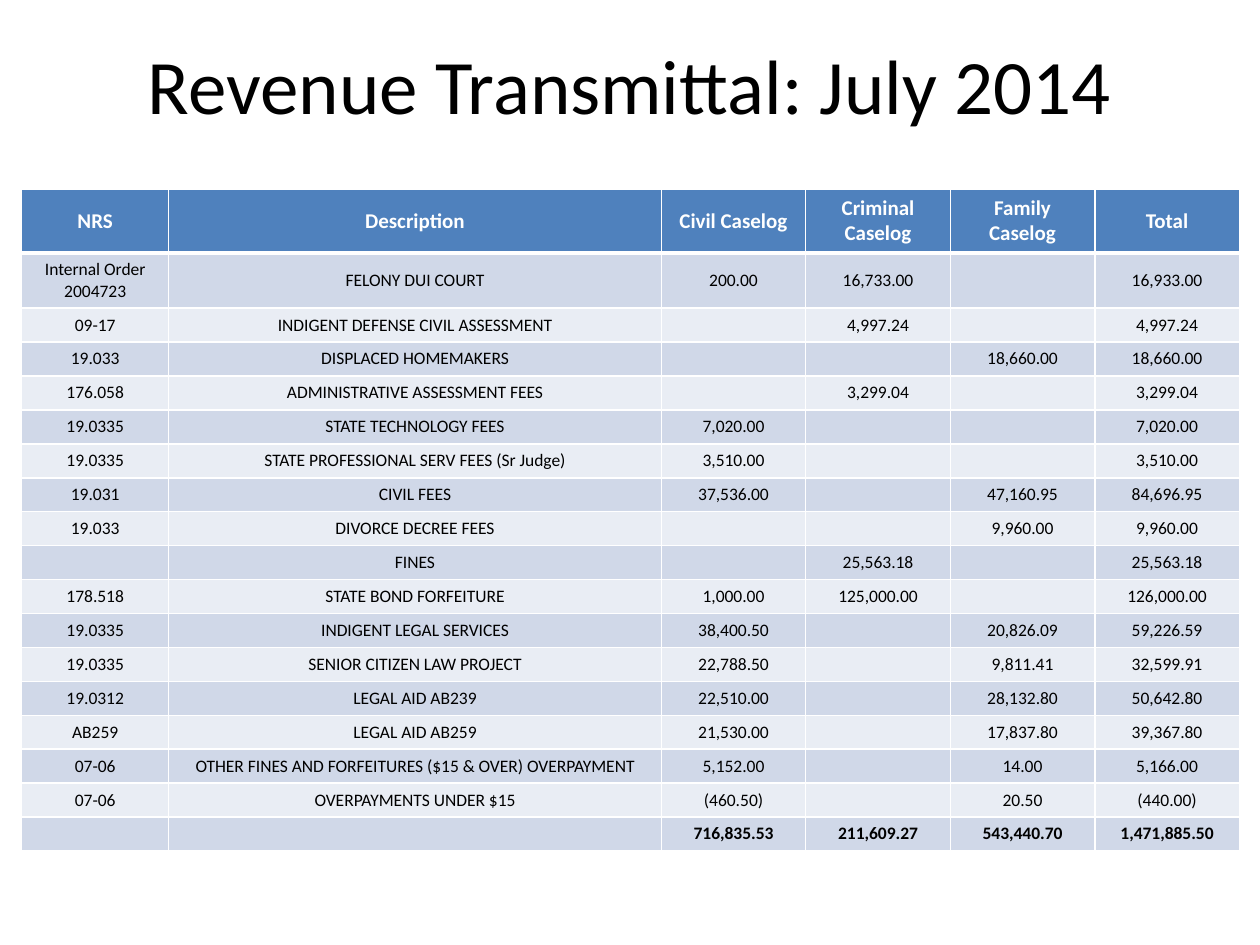
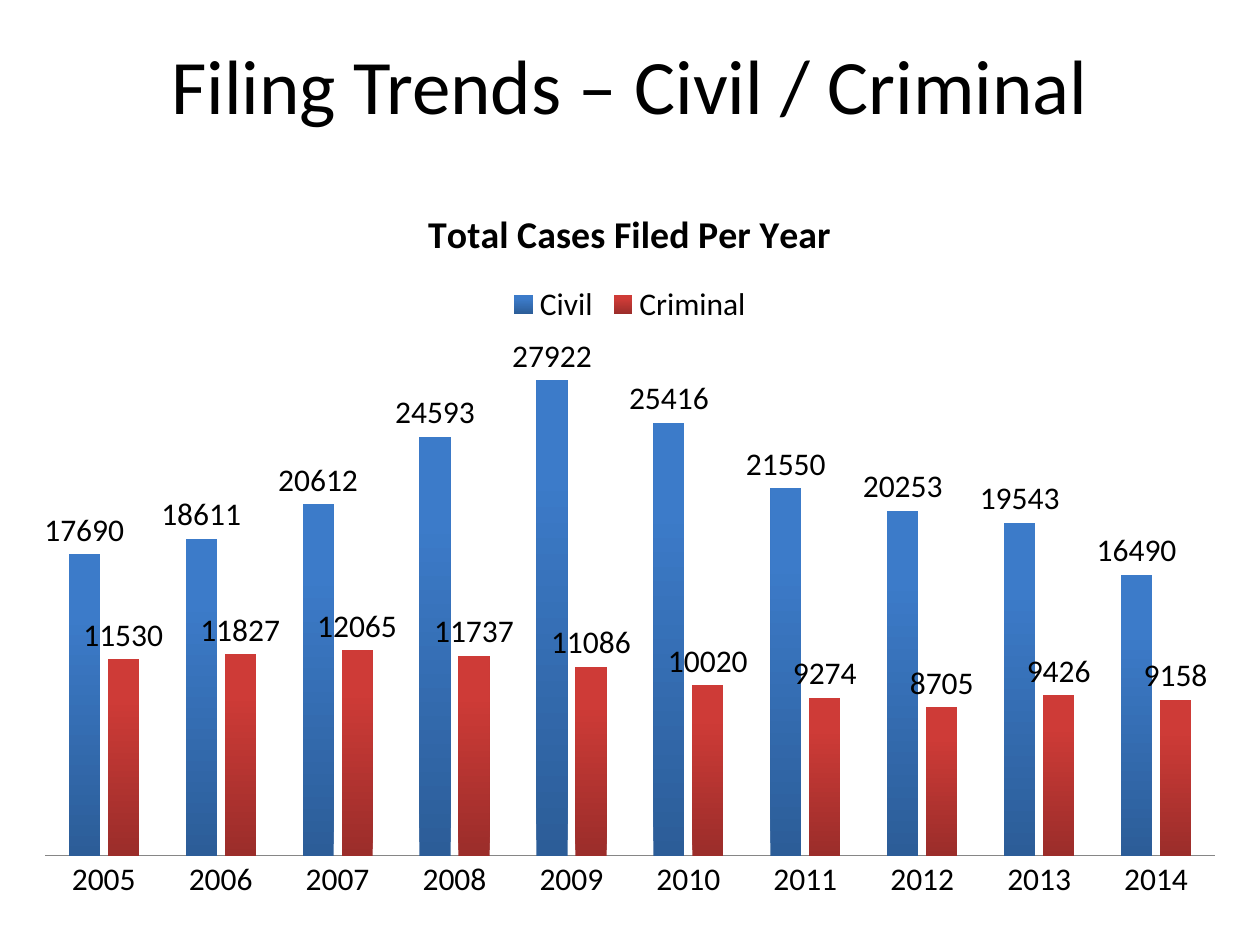
from lxml import etree
from pptx import Presentation
from pptx.chart.data import CategoryChartData
from pptx.dml.color import RGBColor
from pptx.enum.chart import XL_CHART_TYPE, XL_LABEL_POSITION, XL_LEGEND_POSITION, XL_TICK_MARK
from pptx.enum.text import MSO_ANCHOR, PP_ALIGN
from pptx.oxml.ns import qn
from pptx.util import Pt

COLUMN = XL_CHART_TYPE.COLUMN_CLUSTERED
OUTSIDE = XL_LABEL_POSITION.OUTSIDE_END
LEGEND_TOP = XL_LEGEND_POSITION.TOP
NO_TICK = XL_TICK_MARK.NONE
MIDDLE = MSO_ANCHOR.MIDDLE
CENTER = PP_ALIGN.CENTER

BLACK = RGBColor(0x00, 0x00, 0x00)
WHITE = RGBColor(0xFF, 0xFF, 0xFF)
GRAY = RGBColor(0x86, 0x86, 0x86)
HEADER_BLUE = RGBColor(0x4F, 0x81, 0xBD)
BAND_DARK = RGBColor(0xD0, 0xD8, 0xE8)
BAND_LIGHT = RGBColor(0xE9, 0xED, 0xF4)
# Bar gradients, bottom colour then top colour
CIVIL_BLUES = (RGBColor(0x2C, 0x5D, 0x98), RGBColor(0x3C, 0x7B, 0xC9))
CRIMINAL_REDS = (RGBColor(0x9B, 0x2D, 0x2A), RGBColor(0xCE, 0x3B, 0x37))

FONT = "Calibri"
TITLE_ONLY = 5
TITLE_BOX = (36, 6, 648, 84)
TABLE_BOX = (12.4, 108, 696, 378)
CHART_BOX = (12, 102, 696, 420)

COLUMN_WIDTHS = [84, 281.5] + [82.6] * 4
HEADER_HEIGHT, ORDER_HEIGHT, ROW_HEIGHT = 36.5, 31.6, 19.4

HEADERS = ["NRS", "Description", "Civil Caselog", "Criminal Caselog", "Family Caselog", "Total"]
REVENUE = [
    ["Internal Order 2004723", "FELONY DUI COURT", "200.00", "16,733.00", "", "16,933.00"],
    ["09-17", "INDIGENT DEFENSE CIVIL ASSESSMENT", "", "4,997.24", "", "4,997.24"],
    ["19.033", "DISPLACED HOMEMAKERS", "", "", "18,660.00", "18,660.00"],
    ["176.058", "ADMINISTRATIVE ASSESSMENT FEES", "", "3,299.04", "", "3,299.04"],
    ["19.0335", "STATE TECHNOLOGY FEES", "7,020.00", "", "", "7,020.00"],
    ["19.0335", "STATE PROFESSIONAL SERV FEES (Sr Judge)", "3,510.00", "", "", "3,510.00"],
    ["19.031", "CIVIL FEES", "37,536.00", "", "47,160.95", "84,696.95"],
    ["19.033", "DIVORCE DECREE FEES", "", "", "9,960.00", "9,960.00"],
    ["", "FINES", "", "25,563.18", "", "25,563.18"],
    ["178.518", "STATE BOND FORFEITURE", "1,000.00", "125,000.00", "", "126,000.00"],
    ["19.0335", "INDIGENT LEGAL SERVICES", "38,400.50", "", "20,826.09", "59,226.59"],
    ["19.0335", "SENIOR CITIZEN LAW PROJECT", "22,788.50", "", "9,811.41", "32,599.91"],
    ["19.0312", "LEGAL AID AB239", "22,510.00", "", "28,132.80", "50,642.80"],
    ["AB259", "LEGAL AID AB259", "21,530.00", "", "17,837.80", "39,367.80"],
    ["07-06", "OTHER FINES AND FORFEITURES ($15 & OVER) OVERPAYMENT",
     "5,152.00", "", "14.00", "5,166.00"],
    ["07-06", "OVERPAYMENTS UNDER $15", "(460.50)", "", "20.50", "(440.00)"],
    ["", "", "716,835.53", "211,609.27", "543,440.70", "1,471,885.50"],
]

YEARS = [str(year) for year in range(2005, 2015)]
FILINGS = [
    ("Civil", CIVIL_BLUES,
     [17690, 18611, 20612, 24593, 27922, 25416, 21550, 20253, 19543, 16490]),
    ("Criminal", CRIMINAL_REDS,
     [11530, 11827, 12065, 11737, 11086, 10020, 9274, 8705, 9426, 9158]),
]


def points(box):
    return [Pt(v) for v in box]


def style_font(font, size, color=BLACK, bold=False):
    font.name, font.size, font.bold = FONT, Pt(size), bold
    font.color.rgb = color


def add_titled_slide(prs, title):
    slide = prs.slides.add_slide(prs.slide_layouts[TITLE_ONLY])
    sp = slide.shapes.title
    sp.left, sp.top, sp.width, sp.height = points(TITLE_BOX)
    tf = sp.text_frame
    tf.vertical_anchor = MIDDLE
    p = tf.paragraphs[0]
    p.alignment = CENTER
    r = p.add_run()
    r.text = title
    style_font(r.font, 44)
    return slide


def set_borders(cell, top, bottom):
    tc_pr = cell._tc.get_or_add_tcPr()
    for side, width in (("L", 1), ("R", 1), ("T", top), ("B", bottom)):
        ln = etree.SubElement(tc_pr, qn(f"a:ln{side}"), w=str(Pt(width)))
        fill = etree.SubElement(ln, qn("a:solidFill"))
        etree.SubElement(fill, qn("a:srgbClr"), val=str(WHITE))


def fill_cell(cell, text, fill, size, color, bold):
    cell.fill.solid()
    cell.fill.fore_color.rgb = fill
    cell.vertical_anchor = MIDDLE
    p = cell.text_frame.paragraphs[0]
    p.alignment = CENTER
    if text:
        r = p.add_run()
        r.text = text
        style_font(r.font, size, color, bold)
    else:
        etree.SubElement(p._p, qn("a:endParaRPr"), sz=str(size * 100))


def add_revenue_table(slide, box):
    rows = [HEADERS] + REVENUE
    table = slide.shapes.add_table(len(rows), len(HEADERS), *points(box)).table
    for column, width in zip(table.columns, COLUMN_WIDTHS):
        column.width = Pt(width)
    heights = [HEADER_HEIGHT, ORDER_HEIGHT] + [ROW_HEIGHT] * (len(rows) - 2)
    for i, (texts, height) in enumerate(zip(rows, heights)):
        table.rows[i].height = Pt(height)
        if i == 0:
            style = (HEADER_BLUE, 12, WHITE, True)
        else:
            style = (BAND_DARK if i % 2 else BAND_LIGHT, 10, BLACK, i == len(rows) - 1)
        for j, text in enumerate(texts):
            cell = table.cell(i, j)
            set_borders(cell, top=3 if i == 1 else 1, bottom=3 if i == 0 else 1)
            fill_cell(cell, text, *style)


def style_series(series, colors):
    series.invert_if_negative = False
    fill = series.format.fill
    fill.gradient()
    fill.gradient_angle = 90
    for stop, color, position in zip(fill.gradient_stops, colors, (0, 0.8)):
        stop.color.rgb = color
        stop.position = position
    labels = series.data_labels
    labels.show_value = True
    labels.position = OUTSIDE
    style_font(labels.font, 18)


def add_filings_chart(slide, box):
    data = CategoryChartData()
    data.categories = YEARS
    for name, _, values in FILINGS:
        data.add_series(name, values)
    chart = slide.shapes.add_chart(COLUMN, *points(box), data).chart
    style_font(chart.font, 18)

    chart.has_title = True
    r = chart.chart_title.text_frame.paragraphs[0].add_run()
    r.text = "Total Cases Filed Per Year"
    style_font(r.font, 21.6, bold=True)
    chart.chart_title.include_in_layout = False

    chart.has_legend = True
    chart.legend.position = LEGEND_TOP
    chart.legend.include_in_layout = False
    style_font(chart.legend.font, 18)

    years = chart.category_axis
    years.major_tick_mark = NO_TICK
    years.format.line.color.rgb = GRAY
    style_font(years.tick_labels.font, 18)
    cases = chart.value_axis
    cases.visible = False
    cases.has_major_gridlines = False
    cases.minimum_scale, cases.maximum_scale = 0, 30000

    plot = chart.plots[0]
    plot.gap_width, plot.overlap = 150, -25
    plot.vary_by_categories = False
    for series, (_, colors, _) in zip(plot.series, FILINGS):
        style_series(series, colors)


def main():
    prs = Presentation()
    prs.slide_width, prs.slide_height = Pt(720), Pt(540)
    add_revenue_table(add_titled_slide(prs, "Revenue Transmittal: July 2014"), TABLE_BOX)
    add_filings_chart(add_titled_slide(prs, "Filing Trends – Civil / Criminal"), CHART_BOX)
    prs.save("out.pptx")


if __name__ == "__main__":
    main()
